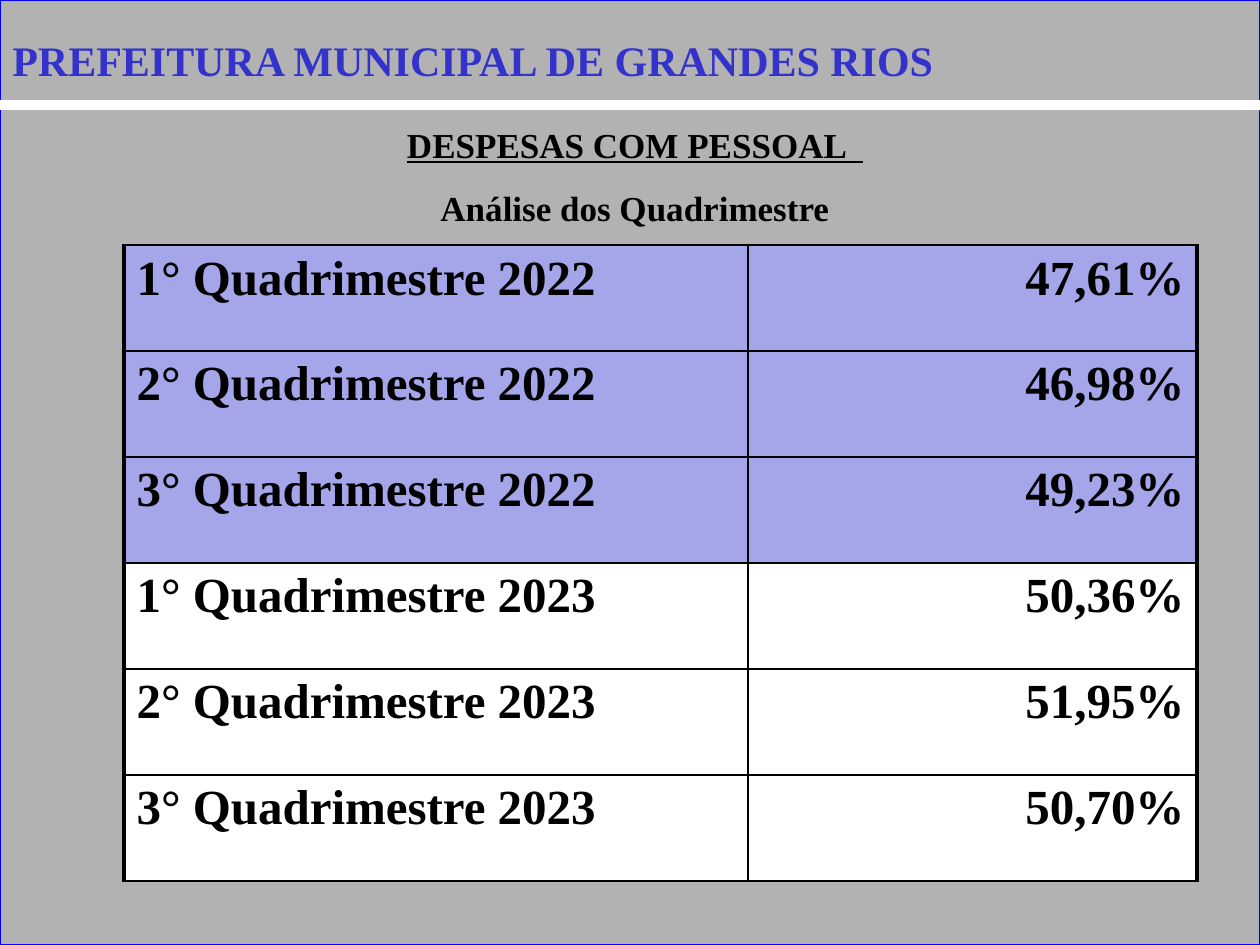
"""Build the slide on personnel spending by four-month period."""
from dataclasses import dataclass
from lxml.etree import SubElement as Sub
from pptx import Presentation
from pptx.dml.color import RGBColor as RGB
from pptx.enum.shapes import MSO_CONNECTOR as Conn, MSO_SHAPE as Shape
from pptx.enum.text import PP_ALIGN as Align
from pptx.oxml.ns import qn
from pptx.util import Emu, Pt


@dataclass
class Theme:
    face: str = "Times New Roman"
    back: str = "B2B2B2"
    edge: str = "0000FF"
    white: str = "FFFFFF"
    ink: str = "000000"
    title: str = "3333CC"
    lilac: str = "A5A5E9"
    shade: str = "808080"
    big: int = 28
    head: int = 24
    sub: int = 20


def px(*vals):
    return [Emu(round(val * 914400 / 126)) for val in vals]


def write(para, text, size, tint, align=Align.LEFT):
    para.text = text
    para.alignment = align
    font = para.font
    font.name, font.size, font.bold = theme.face, Pt(size), True
    font.color.rgb = RGB.from_string(tint)


theme = Theme()
deck = Presentation()
deck.slide_width, deck.slide_height = px(1260, 945)
slide = deck.slides.add_slide(deck.slide_layouts[6])
shapes = slide.shapes

panel = shapes.add_shape(Shape.RECTANGLE, *px(0, 0, 1260, 945))
panel.shadow.inherit = False
panel.fill.solid()
panel.fill.fore_color.rgb = RGB.from_string(theme.back)
panel.line.color.rgb = RGB.from_string(theme.edge)
panel.line.width = Pt(0.75)

rule = shapes.add_connector(Conn.STRAIGHT, *px(0, 105, 1260, 105))
rule.line.color.rgb = RGB.from_string(theme.white)
rule.line.width = Pt(6)
Sub(rule._element.spPr, qn("a:effectLst"))

frame = shapes.add_textbox(*px(73, 96, 1124, 644)).text_frame
frame.word_wrap = True
top, low = frame.paragraphs[0], frame.add_paragraph()
for para, text in (top, "DESPESAS COM PESSOAL  "), (low, "Análise dos Quadrimestre"):
    write(para, text, theme.sub, theme.ink, Align.CENTER)
    para.line_spacing = 1.5
top.font.underline = True

rates = ["47,61%", "46,98%", "49,23%", "50,36%", "51,95%", "50,70%"]
grid = shapes.add_table(len(rates), 2, *px(124, 245, 1073, 636)).table
grid.columns[0].width, grid.columns[1].width = px(624, 449)
for i, rate in enumerate(rates):
    grid.rows[i].height = px(106)[0]
    year, term = divmod(i, 3)
    label = f"{term + 1}° Quadrimestre {2022 + year}"
    for j, (text, align) in enumerate([(label, Align.LEFT), (rate, Align.RIGHT)]):
        cell = grid.cell(i, j)
        write(cell.text_frame.paragraphs[0], text, theme.big, theme.ink, align)
        props = cell._tc.get_or_add_tcPr()
        for side in "LRTB":
            width = 2.25 if side == "LR"[j] else 1
            line = Sub(props, qn(f"a:ln{side}"), w=str(Pt(width)))
            Sub(Sub(line, qn("a:solidFill")), qn("a:srgbClr"), val=theme.ink)
        cell.fill.solid()
        cell.fill.fore_color.rgb = RGB.from_string(theme.white if year else theme.lilac)

frame = shapes.add_textbox(*px(0, 28, 1196, 63)).text_frame
frame.word_wrap = True
para = frame.paragraphs[0]
write(para, "PREFEITURA MUNICIPAL DE GRANDES RIOS", theme.head, theme.title)
glow = Sub(para.runs[0]._r.get_or_add_rPr(), qn("a:effectLst"))
cast = Sub(glow, qn("a:outerShdw"), dist=str(Pt(2)), dir="2700000", algn="tl")
Sub(cast, qn("a:srgbClr"), val=theme.shade)

deck.save("out.pptx")
